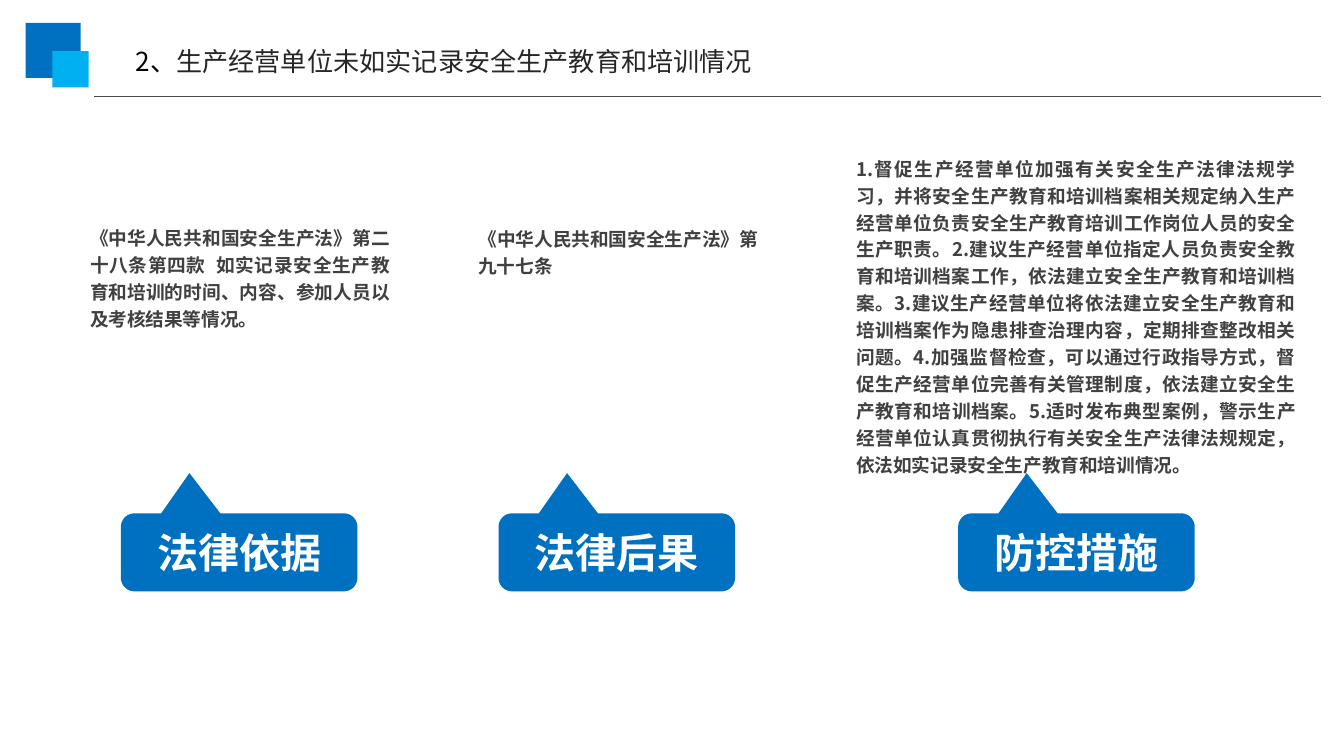
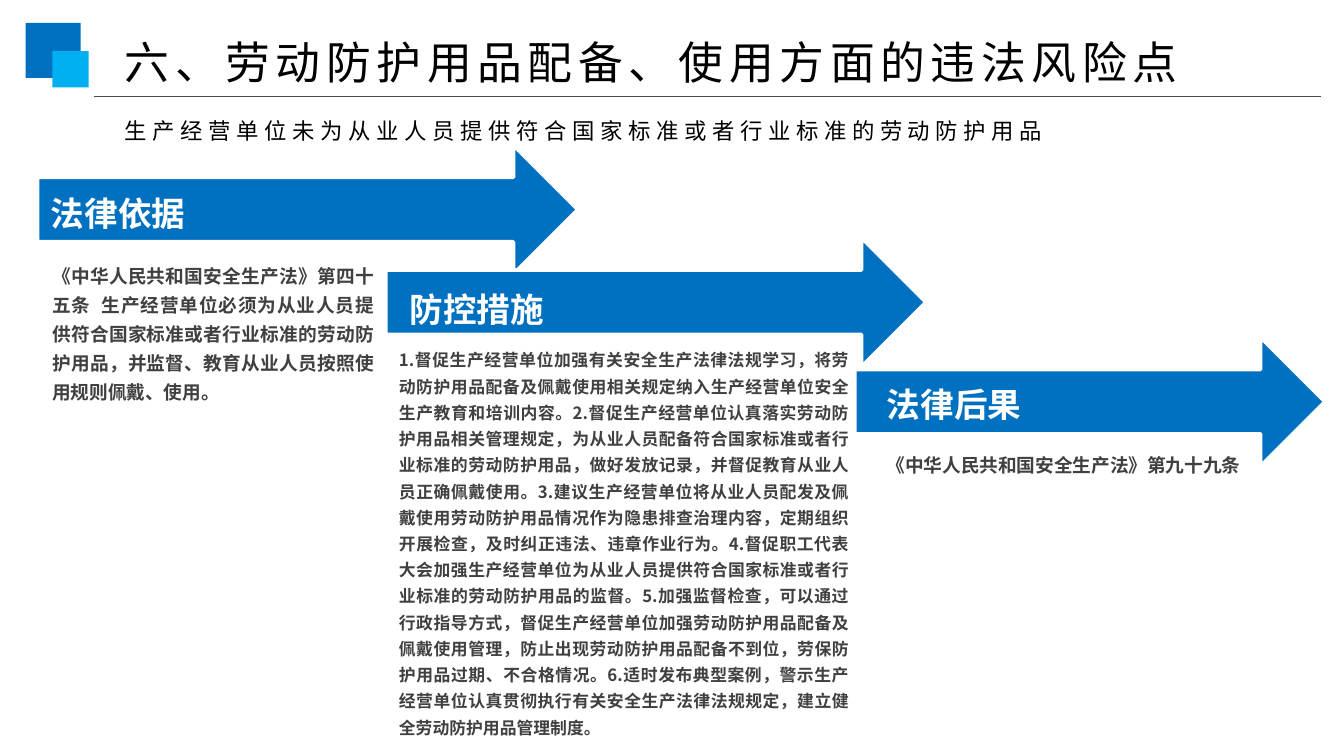
"""Builds two slides on legal risks in work safety training and protective gear."""
import math

import lxml.etree
import pptx
import pptx.dml.color
import pptx.enum.shapes
import pptx.enum.text
import pptx.oxml.ns
import pptx.util

Inches = pptx.util.Inches
Pt = pptx.util.Pt
RGBColor = pptx.dml.color.RGBColor
Align = pptx.enum.text.PP_ALIGN
Anchor = pptx.enum.text.MSO_ANCHOR
Fit = pptx.enum.text.MSO_AUTO_SIZE
Shape = pptx.enum.shapes.MSO_SHAPE
qn = pptx.oxml.ns.qn

BLUE = RGBColor(0x00, 0x70, 0xC0)
SKY = RGBColor(0x00, 0xB0, 0xF0)
RULE = RGBColor(0x4D, 0x49, 0x48)
BLACK = RGBColor(0, 0, 0)
INK = RGBColor(0x26, 0x26, 0x26)
GREY = RGBColor(0x40, 0x40, 0x40)
WHITE = RGBColor(0xFF, 0xFF, 0xFF)
FONT = "Noto Sans CJK SC"


def write(frame, *runs, size=10, bold=False, align=None, anchor=Anchor.TOP,
          inset=(0.1, 0.05, 0.1, 0.05), lead=None, after=None, track=0, grow=False,
          hang=True):
    frame.word_wrap = True
    frame.auto_size = Fit.SHAPE_TO_FIT_TEXT if grow else Fit.NONE
    frame.vertical_anchor = anchor
    (frame.margin_left, frame.margin_top,
     frame.margin_right, frame.margin_bottom) = map(Inches, inset)
    para = frame.paragraphs[0]
    para.alignment = align
    if not hang:
        para._p.get_or_add_pPr().set("hangingPunct", "0")
    if lead:
        para.line_spacing = lead
    if after:
        para.space_after = Pt(after)
    for text, color in runs:
        run = para.add_run()
        run.text = text
        run.font.size = Pt(size)
        run.font.bold = bold
        run.font.name = FONT
        run.font.color.rgb = color
        props = run._r.get_or_add_rPr()
        lxml.etree.SubElement(props, qn("a:ea")).set("typeface", FONT)
        if track:
            props.set("spc", str(track * 100))


class Deck:
    def __init__(self):
        self.show = pptx.Presentation()
        self.show.slide_width = Inches(10)
        self.show.slide_height = Inches(45 / 8)

    def page(self):
        self.slide = self.show.slides.add_slide(self.show.slide_layouts[6])
        self.block(Shape.RECTANGLE, 0.19, 0.17, 0.41, 0.41, BLUE)
        self.block(Shape.RECTANGLE, 0.39, 0.38, 0.27, 0.27, SKY)
        self.rule(9.83, 0.7, 0.72)

    def paint(self, shape, fill, edge=None):
        shape.shadow.inherit = False
        shape.fill.solid()
        shape.fill.fore_color.rgb = fill
        if edge is None:
            shape.line.fill.background()
        else:
            shape.line.color.rgb = edge
            shape.line.width = Pt(2)

    def block(self, kind, left, top, width, height, fill, edge=None):
        shape = self.slide.shapes.add_shape(
            kind, Inches(left), Inches(top), Inches(width), Inches(height))
        self.paint(shape, fill, edge)

    def rule(self, start, end, top):
        line = self.slide.shapes.add_connector(
            pptx.enum.shapes.MSO_CONNECTOR.STRAIGHT,
            Inches(start), Inches(top), Inches(end), Inches(top))
        line.line.color.rgb = RULE
        line.line.width = Pt(0.75)
        lxml.etree.SubElement(line._element.spPr, qn("a:effectLst"))

    def text(self, left, top, width, height, *runs, **style):
        box = self.slide.shapes.add_textbox(
            Inches(left), Inches(top), Inches(width), Inches(height))
        write(box.text_frame, *runs, **style)

    def bubble(self, left, label, tip=3.52, top=3.82, width=1.76, height=0.58, bend=0.1):
        right, base = left + width, top + height
        points = [(left + 0.74, top)]
        corners = [(right - bend, top + bend, -90), (right - bend, base - bend, 0),
                   (left + bend, base - bend, 90), (left + bend, top + bend, 180)]
        for x, y, start in corners:
            for step in range(0, 91, 10):
                turn = math.radians(start + step)
                points.append((x + bend * math.cos(turn), y + bend * math.sin(turn)))
        points.append((left + 0.3, top))
        path = self.slide.shapes.build_freeform(Inches(left + 0.51), Inches(tip))
        path.add_line_segments([(Inches(x), Inches(y)) for x, y in points])
        shape = path.convert_to_shape()
        self.paint(shape, BLUE)
        write(shape.text_frame, (label, WHITE), size=22, bold=True, align=Align.CENTER,
              anchor=Anchor.MIDDLE, inset=(0.11, 0.35, 0.11, 0.06))

    def note(self, left, top, width, height, words):
        self.text(left, top, width, height, (words, GREY), bold=True, align=Align.JUSTIFY,
                  anchor=Anchor.MIDDLE, inset=(0.06,) * 4, lead=1.2, after=6.6, hang=False)

    def arrow(self, left, top, width):
        self.block(Shape.RIGHT_ARROW, left, top, width, 0.96, BLUE, WHITE)

    def label(self, left, top, words):
        self.text(left, top, 1.89, 0.4, (words, WHITE), size=18, bold=True, grow=True)

    def body(self, left, top, width, height, words, size=10):
        self.text(left, top, width, height, (words, GREY), size=size, bold=True,
                  align=Align.JUSTIFY, lead=1.3, after=6, grow=True)


def record(deck):
    deck.page()
    deck.text(0.91, 0.29, 5.13, 0.33, ("2、", BLACK),
              ("生产经营单位未如实记录安全生产教育和培训情况", INK), size=14, grow=True)
    for left, label in ((0.9, "法律依据"), (7.13, "防控措施")):
        deck.bubble(left, label)
    deck.note(0.61, 1.16, 2.35, 1.79,
              "《中华人民共和国安全生产法》第二十八条第四款  如实记录安全生产教育和培训的时间、"
              "内容、参加人员以及考核结果等情况。")
    deck.note(3.5, 1.63, 2.2, 0.46, "《中华人民共和国安全生产法》第九十七条")
    deck.note(6.31, 1.63, 3.39, 1.42,
              "1.督促生产经营单位加强有关安全生产法律法规学习，并将安全生产教育和培训档案相关规定"
              "纳入生产经营单位负责安全生产教育培训工作岗位人员的安全生产职责。"
              "2.建议生产经营单位指定人员负责安全教育和培训档案工作，依法建立安全生产教育和培训档案。"
              "3.建议生产经营单位将依法建立安全生产教育和培训档案作为隐患排查治理内容，"
              "定期排查整改相关问题。"
              "4.加强监督检查，可以通过行政指导方式，督促生产经营单位完善有关管理制度，"
              "依法建立安全生产教育和培训档案。"
              "5.适时发布典型案例，警示生产经营单位认真贯彻执行有关安全生产法律法规规定，"
              "依法如实记录安全生产教育和培训情况。")
    deck.bubble(3.71, "法律后果")


def gear(deck):
    deck.page()
    deck.text(0.83, 0.21, 8.2, 0.5, ("六、劳动防护用品配备、使用方面的违法风险点", BLACK),
              size=24, track=3, grow=True)
    deck.text(0.83, 0.72, 8.68, 0.4,
              ("生产经营单位未为从业人员提供符合国家标准或者行业标准的劳动防护用品", BLACK),
              size=12, track=3, lead=1.5, grow=True)
    deck.arrow(0.28, 1.08, 4.02)
    deck.body(0.29, 1.87, 2.59, 1.19,
              "《中华人民共和国安全生产法》第四十五条  生产经营单位必须为从业人员提供符合国家标准"
              "或者行业标准的劳动防护用品，并监督、教育从业人员按照使用规则佩戴、使用。")
    deck.arrow(6.36, 2.51, 3.5)
    deck.arrow(2.87, 1.77, 4.02)
    deck.label(0.28, 1.39, "法律依据")
    deck.label(6.5, 2.81, "法律后果")
    deck.label(2.95, 2.1, "防控措施")
    deck.body(2.87, 2.51, 3.54, 3.05,
              "1.督促生产经营单位加强有关安全生产法律法规学习，将劳动防护用品配备及佩戴使用相关规定"
              "纳入生产经营单位安全生产教育和培训内容。"
              "2.督促生产经营单位认真落实劳动防护用品相关管理规定，为从业人员配备符合国家标准"
              "或者行业标准的劳动防护用品，做好发放记录，并督促教育从业人员正确佩戴使用。"
              "3.建议生产经营单位将从业人员配发及佩戴使用劳动防护用品情况作为隐患排查治理内容，"
              "定期组织开展检查，及时纠正违法、违章作业行为。"
              "4.督促职工代表大会加强生产经营单位为从业人员提供符合国家标准或者行业标准的"
              "劳动防护用品的监督。"
              "5.加强监督检查，可以通过行政指导方式，督促生产经营单位加强劳动防护用品配备及佩戴"
              "使用管理，防止出现劳动防护用品配备不到位，劳保防护用品过期、不合格情况。"
              "6.适时发布典型案例，警示生产经营单位认真贯彻执行有关安全生产法律法规规定，"
              "建立健全劳动防护用品管理制度。", size=9)
    deck.body(6.5, 3.28, 3.07, 0.32, "《中华人民共和国安全生产法》第九十九条")


def main():
    deck = Deck()
    record(deck)
    gear(deck)
    deck.show.save("out.pptx")


if __name__ == "__main__":
    main()
